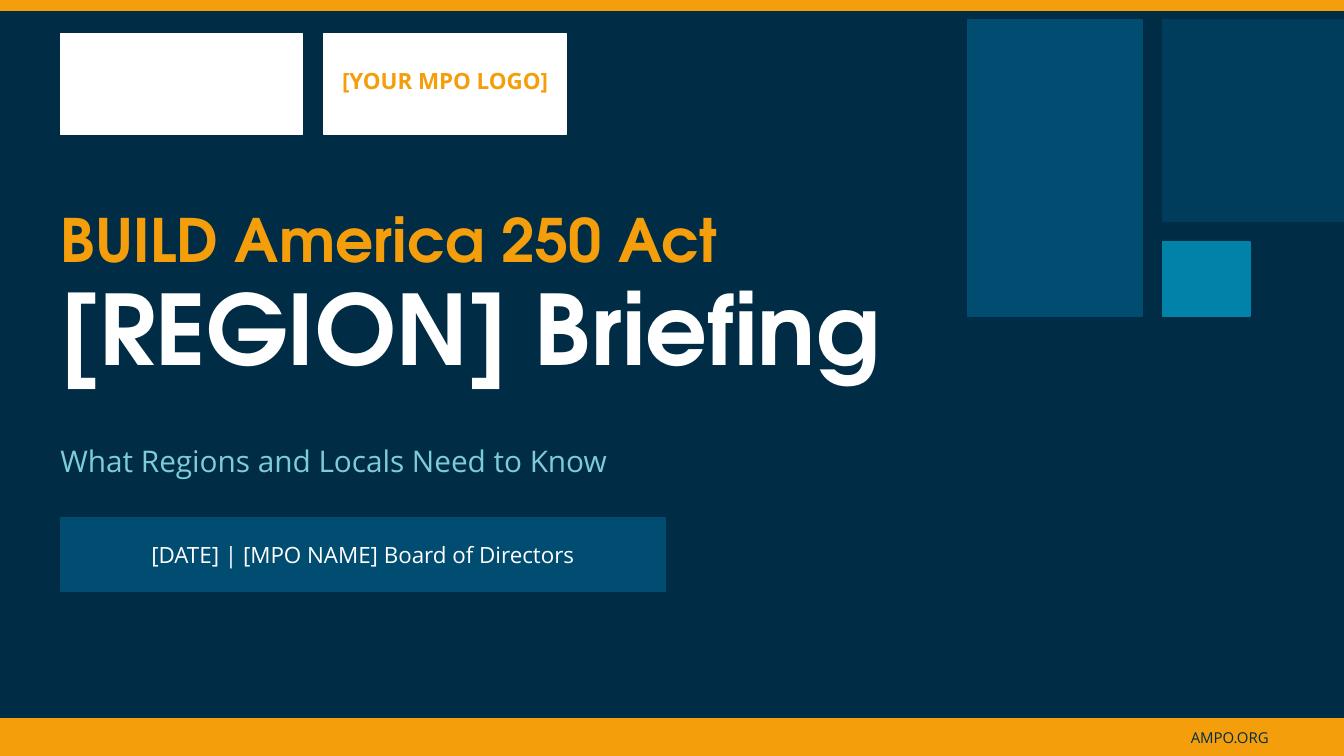
from collections import namedtuple

from pptx import Presentation
from pptx.dml.color import RGBColor
from pptx.enum.shapes import MSO_SHAPE
from pptx.enum.text import MSO_ANCHOR, MSO_AUTO_SIZE, PP_ALIGN
from pptx.util import Inches, Pt

NAVY = RGBColor(0x00, 0x2D, 0x45)
DEEP = RGBColor(0x00, 0x3D, 0x5C)
BLUE = RGBColor(0x00, 0x4D, 0x71)
TEAL = RGBColor(0x00, 0x82, 0xA9)
AQUA = RGBColor(0x7E, 0xCB, 0xDC)
ORANGE = RGBColor(0xF5, 0x9E, 0x0B)
WHITE = RGBColor(0xFF, 0xFF, 0xFF)

HEAD = "TeX Gyre Adventor"
BODY = "Open Sans"

CELL = Inches(1) / 15
COLS, ROWS = 200, 112.5

Box = namedtuple("Box", "x y w h")


def inner(box, x, y, w, h):
    return Box(box.x + x, box.y + y, w, h)


def emu(box):
    return [round(v * CELL) for v in box]


def panel(s, box, color):
    sp = s.shapes.add_shape(MSO_SHAPE.RECTANGLE, *emu(box))
    sp.shadow.inherit = False
    sp.fill.solid()
    sp.fill.fore_color.rgb = color
    sp.line.color.rgb = color
    sp.line.width = Pt(1)


def write(sp, text, size, color, font=BODY, bold=False,
          align=PP_ALIGN.LEFT, anchor=MSO_ANCHOR.MIDDLE):
    tf = sp.text_frame
    tf.word_wrap = True
    tf.auto_size = MSO_AUTO_SIZE.NONE
    tf.vertical_anchor = anchor
    tf.margin_left = tf.margin_right = tf.margin_top = tf.margin_bottom = 0
    p = tf.paragraphs[0]
    p.alignment = align
    r = p.add_run()
    r.text = text
    r.font.name = font
    r.font.size = Pt(size)
    r.font.bold = bold
    r.font.color.rgb = color


def label(s, box, text, size, color, **style):
    write(s.shapes.add_textbox(*emu(box)), text, size, color, **style)


def add_logo_cards(s, box):
    width = 36
    region = inner(box, box.w - width, 0, width, box.h)
    panel(s, inner(box, 0, 0, width, box.h), WHITE)
    panel(s, region, WHITE)
    label(s, inner(region, 0, 5, width, 5.5), "[YOUR MPO LOGO]", 16, ORANGE,
          bold=True, align=PP_ALIGN.CENTER, anchor=MSO_ANCHOR.TOP)


def add_mosaic(s, box):
    gap, tall = 3, 26
    right = tall + gap
    panel(s, inner(box, 0, 0, tall, box.h), BLUE)
    panel(s, inner(box, right, 0, box.w - right, 30), DEEP)
    panel(s, inner(box, right, 30 + gap, tall / 2, box.h - 30 - gap), TEAL)


def add_headline(s, box):
    label(s, inner(box, 0, 0, box.w, 13), "BUILD America 250 Act",
          42.7, ORANGE, font=HEAD, bold=True)
    title = s.shapes.title
    title.left, title.top, title.width, title.height = emu(
        inner(box, 0, 11, box.w, 22))
    write(title, "[REGION] Briefing", 69.3, WHITE, font=HEAD, bold=True,
          anchor=MSO_ANCHOR.TOP)


def add_details(s, box):
    label(s, inner(box, 0, 0, box.w, 9),
          "What Regions and Locals Need to Know", 21.3, AQUA)
    event = inner(box, 0, 13, 90, 11)
    panel(s, event, BLUE)
    label(s, event, "[DATE] | [MPO NAME] Board of Directors", 16, WHITE,
          align=PP_ALIGN.CENTER)


def add_footer(s, box):
    panel(s, box, ORANGE)
    label(s, inner(box, 170, 0, 26, box.h), "AMPO.ORG", 10.7, NAVY,
          align=PP_ALIGN.CENTER)


def add_cover(prs):
    s = prs.slides.add_slide(prs.slide_layouts[5])
    s.background.fill.solid()
    s.background.fill.fore_color.rgb = NAVY
    panel(s, Box(0, 0, COLS, 1.6), ORANGE)
    add_mosaic(s, Box(144, 3, COLS - 144, 44))
    add_logo_cards(s, Box(9, 5, 75.25, 15))
    add_headline(s, Box(9, 29, 130, 33))
    add_details(s, Box(9, 64, 136, 24))
    add_footer(s, Box(0, 107, COLS, 5.4))


def main():
    prs = Presentation()
    prs.slide_width = round(COLS * CELL)
    prs.slide_height = round(ROWS * CELL)
    add_cover(prs)
    prs.save("out.pptx")


if __name__ == "__main__":
    main()
